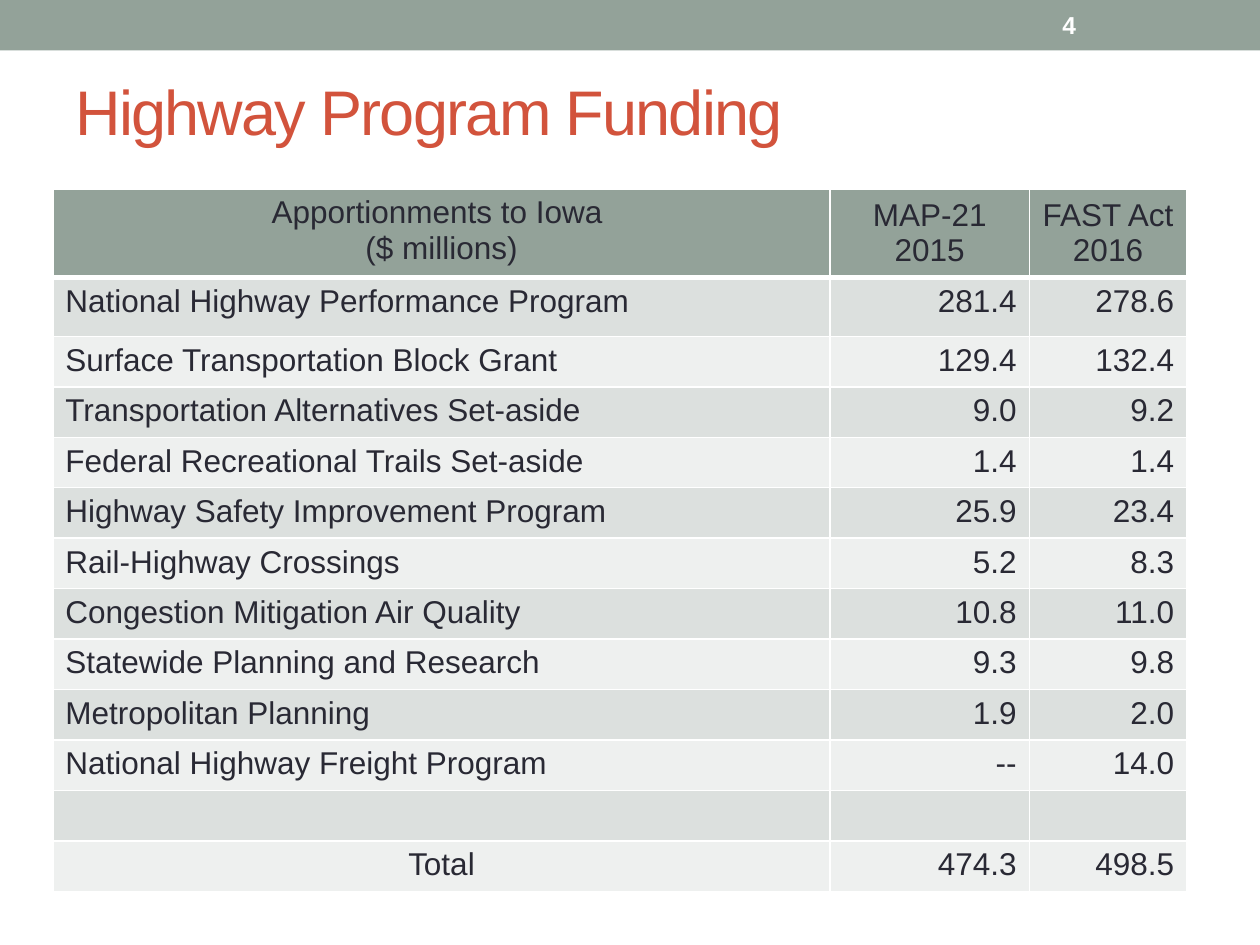
from dataclasses import dataclass

from lxml import etree
from pptx import Presentation
from pptx.dml.color import RGBColor
from pptx.enum import shapes, text
from pptx.oxml import ns
from pptx.util import Pt


@dataclass(frozen=True)
class Theme:
    font: str = "Arial"
    sage: str = "93A299"
    red: str = "D2533C"
    ink: str = "292934"
    white: str = "FFFFFF"
    bands: tuple = ("DCE0DE", "EEF0EF")
    title_size: int = 36
    body_size: int = 18
    number_size: int = 14


THEME = Theme()
LEFT, CENTER, RIGHT = text.PP_ALIGN.LEFT, text.PP_ALIGN.CENTER, text.PP_ALIGN.RIGHT
TOP, MIDDLE = text.MSO_ANCHOR.TOP, text.MSO_ANCHOR.MIDDLE

COLUMN_WIDTHS = (444.2, 113.8, 90)
HEADER_HEIGHT, FIRST_ROW_HEIGHT, ROW_HEIGHT = 46.8, 33.8, 27.4
HEADERS = (
    (("Apportionments to Iowa ", "($ millions)"), TOP),
    (("MAP-21 2015",), MIDDLE),
    (("FAST Act", "2016"), MIDDLE),
)
FUNDING = (
    ("National Highway Performance Program", "281.4", "278.6"),
    ("Surface Transportation Block Grant", "129.4", "132.4"),
    ("Transportation Alternatives Set-aside", "9.0", "9.2"),
    ("Federal Recreational Trails Set-aside", "1.4", "1.4"),
    ("Highway Safety Improvement Program", "25.9", "23.4"),
    ("Rail-Highway Crossings", "5.2", "8.3"),
    ("Congestion Mitigation Air Quality", "10.8", "11.0"),
    ("Statewide Planning and Research", "9.3", "9.8"),
    ("Metropolitan Planning", "1.9", "2.0"),
    ("National Highway Freight Program", "--", "14.0"),
    ("", "", ""),
    ("Total", "474.3", "498.5"),
)


def style_paragraph(paragraph, size, color, align=LEFT, bold=False):
    paragraph.alignment = align
    font = paragraph.font
    font.name, font.size, font.bold = THEME.font, Pt(size), bold
    font.color.rgb = RGBColor.from_string(color)


def add_band(slide, width, height):
    band = slide.shapes.add_shape(
        shapes.MSO_SHAPE.RECTANGLE, Pt(0), Pt(0), Pt(width), Pt(height))
    band.shadow.inherit = False
    band.fill.solid()
    band.fill.fore_color.rgb = RGBColor.from_string(THEME.sage)
    band.line.fill.background()


def add_text(slide, wording, box, size, color, bold=False, spacing=0):
    """Add one line of text; spacing is the letter spacing in points."""
    frame = slide.shapes.add_textbox(*map(Pt, box)).text_frame
    frame.word_wrap = True
    frame.vertical_anchor = MIDDLE
    paragraph = frame.paragraphs[0]
    run = paragraph.add_run()
    run.text = wording
    style_paragraph(paragraph, size, color, bold=bold)
    if spacing:
        run._r.get_or_add_rPr().set("spc", str(spacing * 100))


def set_borders(cell, top=1, bottom=1):
    properties = cell._tc.get_or_add_tcPr()
    widths = {"lnL": 1, "lnR": 1, "lnT": top, "lnB": bottom}
    for index, (tag, width) in enumerate(widths.items()):
        line = etree.Element(ns.qn(f"a:{tag}"), w=str(Pt(width)))
        fill = etree.SubElement(line, ns.qn("a:solidFill"))
        etree.SubElement(fill, ns.qn("a:srgbClr"), val=THEME.white)
        properties.insert(index, line)


def fill_cell(cell, lines, color, align, anchor=TOP):
    cell.fill.solid()
    cell.fill.fore_color.rgb = RGBColor.from_string(color)
    cell.vertical_anchor = anchor
    cell.text = "\n".join(lines)
    for paragraph in cell.text_frame.paragraphs:
        style_paragraph(paragraph, THEME.body_size, THEME.ink, align)


def add_funding_table(slide, left, top):
    heights = [HEADER_HEIGHT, FIRST_ROW_HEIGHT] + [ROW_HEIGHT] * (len(FUNDING) - 1)
    table = slide.shapes.add_table(
        len(heights), len(COLUMN_WIDTHS), Pt(left), Pt(top),
        Pt(sum(COLUMN_WIDTHS)), Pt(sum(heights))).table
    table.first_row = table.horz_banding = False
    for column, width in zip(table.columns, COLUMN_WIDTHS):
        column.width = Pt(width)
    for row, height in zip(table.rows, heights):
        row.height = Pt(height)

    for index, (lines, anchor) in enumerate(HEADERS):
        cell = table.cell(0, index)
        fill_cell(cell, lines, THEME.sage, CENTER, anchor)
        set_borders(cell, bottom=3)
    for row_index, values in enumerate(FUNDING, start=1):
        label_align = CENTER if values[0] == "Total" else LEFT
        for index, value in enumerate(values):
            cell = table.cell(row_index, index)
            align = RIGHT if index else label_align
            fill_cell(cell, (value,), THEME.bands[(row_index - 1) % 2], align)
            set_borders(cell, top=3 if row_index == 1 else 1)


def main():
    presentation = Presentation()
    presentation.slide_width, presentation.slide_height = Pt(720), Pt(540)
    slide = presentation.slides.add_slide(presentation.slide_layouts[6])
    add_band(slide, 720, 28.8)
    add_text(slide, "Highway Program Funding", (36, 30.2, 648, 66.2),
             THEME.title_size, THEME.red, spacing=-1)
    add_funding_table(slide, 30.2, 108)
    add_text(slide, "4", (600, 1.4, 84, 25.9),
             THEME.number_size, THEME.white, bold=True)
    presentation.save("out.pptx")


if __name__ == "__main__":
    main()
